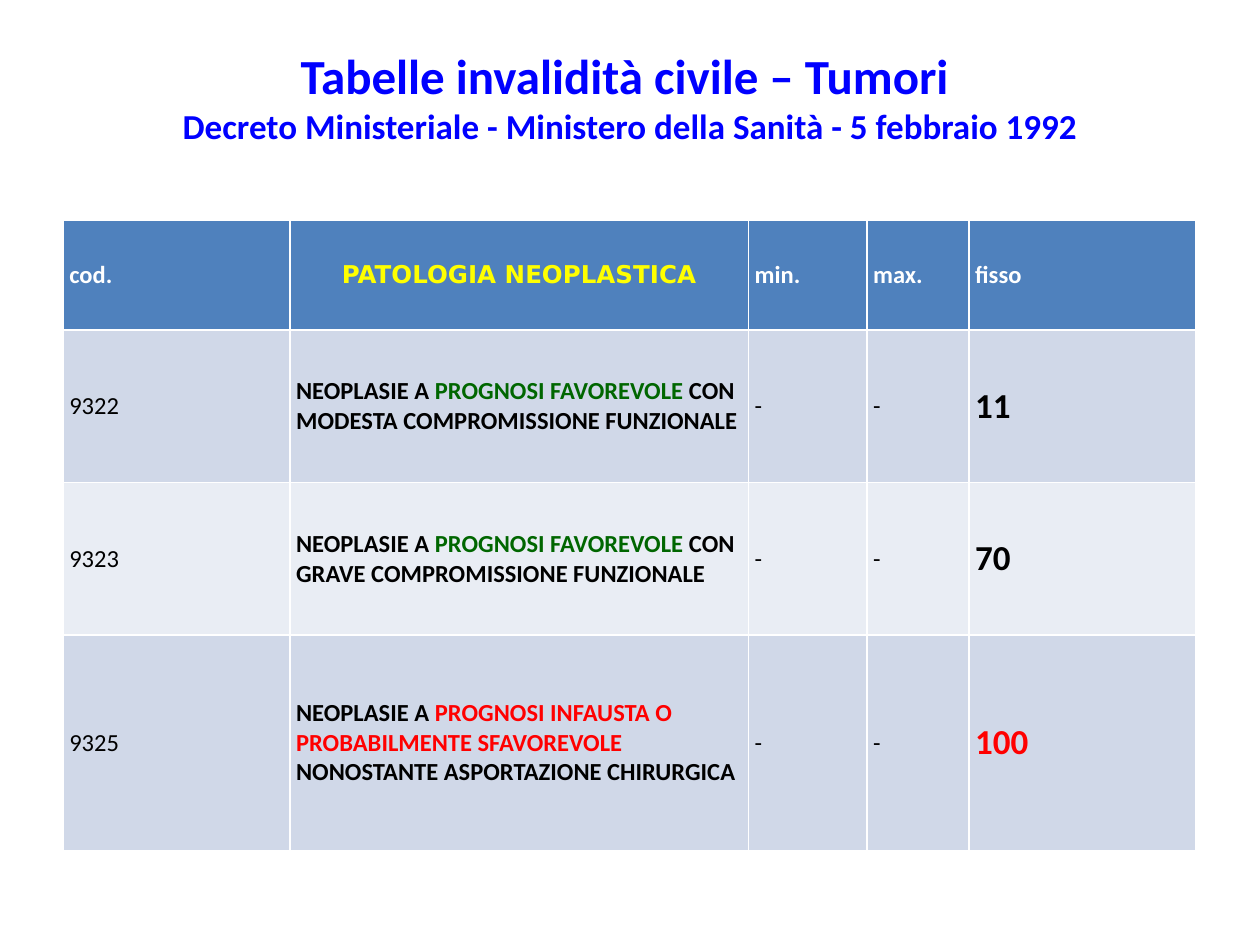
import pptx
import pptx.dml.color
import pptx.enum.text
import pptx.util
from dataclasses import dataclass

Inches = pptx.util.Inches
Align = pptx.enum.text.PP_ALIGN
MIDDLE = pptx.enum.text.MSO_ANCHOR.MIDDLE


@dataclass(frozen=True)
class Theme:
    font: str = "Calibri"
    accent: str = "DejaVu Sans"
    blue: str = "0000FF"
    white: str = "FFFFFF"
    black: str = "000000"
    yellow: str = "FFFF00"
    green: str = "006600"
    red: str = "FF0000"
    head: str = "4F81BD"
    bands: tuple = ("D0D8E8", "E9EDF4")
    title: int = 28
    large: int = 20
    body: int = 14


THEME = Theme()


def rgb(code):
    return pptx.dml.color.RGBColor.from_string(code)


class Page:
    def __init__(self, slide, theme):
        self.slide = slide
        self.theme = theme

    def label(self, para, text, color, size=None, bold=True, font=None):
        """Append one styled run to a paragraph."""
        run = para.add_run()
        run.text = text
        style = {
            "name": font or self.theme.font,
            "size": pptx.util.Pt(size or self.theme.body),
            "bold": bold,
        }
        for key, value in style.items():
            setattr(run.font, key, value)
        run.font.color.rgb = rgb(color)

    def title(self, box, lines):
        """Centre lines of (text, size) in one paragraph."""
        frame = self.slide.shapes.add_textbox(*map(Inches, box)).text_frame
        frame.word_wrap = True
        frame.vertical_anchor = MIDDLE
        para = frame.paragraphs[0]
        para.alignment = Align.CENTER
        for i, (text, size) in enumerate(lines):
            if i:
                para.add_line_break()
            self.label(para, text, self.theme.blue, size)

    def cell(self, cell, fill, runs, align=Align.LEFT):
        style = {"vertical_anchor": MIDDLE}
        for side in ("left", "right", "top", "bottom"):
            style["margin_" + side] = Inches(0.05)
        for key, value in style.items():
            setattr(cell, key, value)
        cell.fill.solid()
        cell.fill.fore_color.rgb = rgb(fill)
        para = cell.text_frame.paragraphs[0]
        para.alignment = align
        for run in runs:
            self.label(para, **run)

    def table(self, left, top, widths, heights):
        """Add an empty grid; its default style draws the white rules."""
        grid = self.slide.shapes.add_table(
            len(heights), len(widths), Inches(left), Inches(top),
            Inches(sum(widths)), Inches(sum(heights))).table
        for col, width in zip(grid.columns, widths):
            col.width = Inches(width)
        for row, height in zip(grid.rows, heights):
            row.height = Inches(height)
        return grid

    def header(self, grid, names, main):
        for i, name in enumerate(names):
            run = {"text": name, "color": self.theme.white}
            align = Align.LEFT
            if i == main:
                run.update(color=self.theme.yellow, font=self.theme.accent)
                align = Align.CENTER
            self.cell(grid.cell(0, i), self.theme.head, [run], align)

    def row(self, grid, index, code, outlook, tint, rest, fixed, shade):
        black = self.theme.black
        dash = [{"text": "-", "color": black, "bold": False}]
        cells = [
            [{"text": code, "color": black, "bold": False}],
            [{"text": "NEOPLASIE A ", "color": black},
             {"text": outlook + " ", "color": tint},
             {"text": rest, "color": black}],
            dash,
            dash,
            [{"text": fixed, "color": shade, "size": self.theme.large}],
        ]
        fill = self.theme.bands[(index - 1) % 2]
        for i, runs in enumerate(cells):
            self.cell(grid.cell(index, i), fill, runs)


def main():
    deck = pptx.Presentation()
    deck.slide_width, deck.slide_height = Inches(10), Inches(7.5)
    page = Page(deck.slides.add_slide(deck.slide_layouts[6]), THEME)
    page.title((0.59, 0.3, 8.82, 0.93), [
        ("Tabelle invalidità civile – Tumori ", THEME.title),
        ("Decreto Ministeriale - Ministero della Sanità - 5 febbraio 1992",
         THEME.large),
    ])
    grid = page.table(0.5, 1.75, (1.8, 3.64, 0.94, 0.81, 1.8),
                      (0.87, 1.21, 1.21, 1.71))
    page.header(
        grid, ("cod.", "PATOLOGIA NEOPLASTICA", "min.", "max.", "fisso"), 1)
    rows = [
        ("9322", "PROGNOSI FAVOREVOLE", THEME.green,
         "CON MODESTA COMPROMISSIONE FUNZIONALE", "11", THEME.black),
        ("9323", "PROGNOSI FAVOREVOLE", THEME.green,
         "CON GRAVE COMPROMISSIONE FUNZIONALE", "70", THEME.black),
        ("9325", "PROGNOSI INFAUSTA O PROBABILMENTE SFAVOREVOLE", THEME.red,
         "NONOSTANTE ASPORTAZIONE CHIRURGICA", "100", THEME.red),
    ]
    for index, row in enumerate(rows, 1):
        page.row(grid, index, *row)
    deck.save("out.pptx")


if __name__ == "__main__":
    main()
